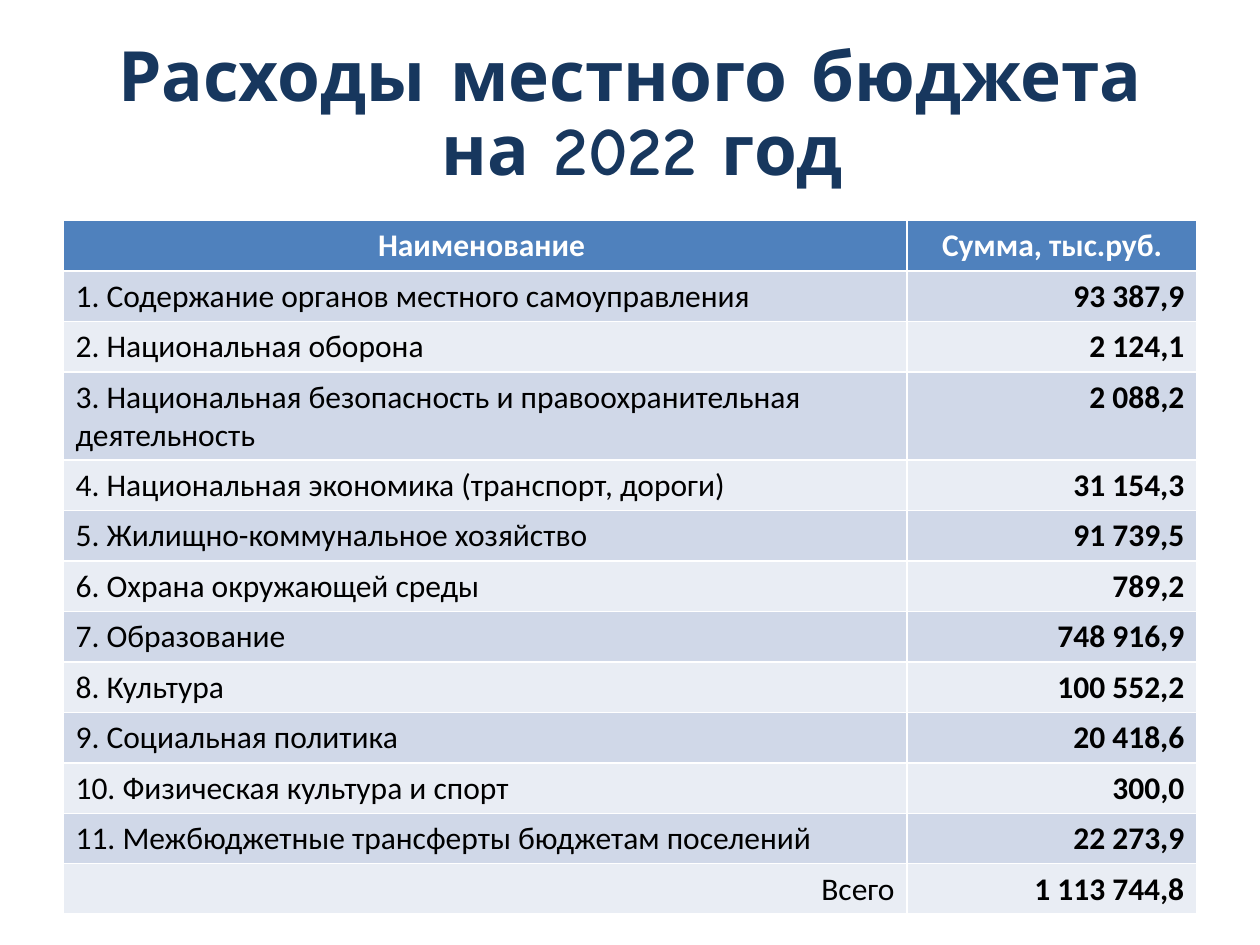
import pptx
import pptx.util
import pptx.dml.color
import pptx.enum.text
from dataclasses import dataclass

Inches = pptx.util.Inches
Align = pptx.enum.text.PP_ALIGN


@dataclass(frozen=True)
class Theme:
    """Colours, fonts and type sizes of the slide."""
    navy: str = "17375E"
    blue: str = "4F81BD"
    white: str = "FFFFFF"
    black: str = "000000"
    bands: tuple = ("D0D8E8", "E9EDF4")
    head: str = "Comic Neue"
    body: str = "Calibri"
    big: float = 39.6
    small: float = 18


THEME = Theme()
TITLE = ("Расходы местного бюджета", " на 2022 год")
HEADS = ("Наименование ", "Сумма, тыс.руб.")
COSTS = (
    ("1. Содержание органов местного самоуправления", "93 387,9"),
    ("2. Национальная оборона", "2 124,1"),
    ("3. Национальная безопасность и правоохранительная деятельность", "2 088,2"),
    ("4. Национальная экономика (транспорт, дороги)", "31 154,3"),
    ("5. Жилищно-коммунальное хозяйство", "91 739,5"),
    ("6. Охрана окружающей среды", "789,2"),
    ("7. Образование", "748 916,9"),
    ("8. Культура", "100 552,2"),
    ("9. Социальная политика", "20 418,6"),
    ("10. Физическая культура и спорт", "300,0"),
    ("11. Межбюджетные трансферты бюджетам поселений", "22 273,9"),
)
TOTAL = ("Всего", "1 113 744,8")


def style(item, **values):
    """Set each format value on the item."""
    for name, value in values.items():
        setattr(item, name, value)


def tint(hue):
    """Turn a hex string into a colour."""
    return pptx.dml.color.RGBColor.from_string(hue)


def write(para, lines, face, size, hue, bold, align):
    """Fill a paragraph with lines of one look."""
    for spot, line in enumerate(lines):
        if spot:
            para.add_line_break()
        run = para.add_run()
        run.text = line
        style(run.font, name=face, size=pptx.util.Pt(size), bold=bold)
        run.font.color.rgb = tint(hue)
    para.alignment = align


def add_title(slide):
    """Add the two-line heading."""
    box = slide.shapes.add_textbox(Inches(0.5), Inches(0.3), Inches(9), Inches(1.25))
    frame = box.text_frame
    style(frame, word_wrap=True, vertical_anchor=pptx.enum.text.MSO_ANCHOR.MIDDLE)
    para = frame.paragraphs[0]
    write(para, TITLE, THEME.head, THEME.big, THEME.navy, True, Align.CENTER)
    para.line_spacing = 0.88


def fill_row(row, texts, back, hue, bolds, aligns):
    """Write and colour the cells of one row."""
    for cell, text, bold, align in zip(row.cells, texts, bolds, aligns):
        cell.fill.solid()
        cell.fill.fore_color.rgb = tint(back)
        para = cell.text_frame.paragraphs[0]
        write(para, [text], THEME.body, THEME.small, hue, bold, align)


def add_costs(slide):
    """Add the budget table with its header and total."""
    rows = (*COSTS, TOTAL)
    frame = slide.shapes.add_table(len(rows) + 1, 2, Inches(0.5), Inches(1.75),
                                   Inches(9), Inches(5.57))
    table = frame.table
    for col, width in zip(table.columns, (6.7, 2.3)):
        col.width = Inches(width)
    for row in table.rows:
        row.height = Inches(0.4)
    frame.height = Inches(5.57)
    fill_row(table.rows[0], HEADS, THEME.blue, THEME.white,
             (True, True), (Align.CENTER, Align.CENTER))
    for spot, texts in enumerate(rows):
        side = Align.RIGHT if texts is TOTAL else Align.LEFT
        fill_row(table.rows[spot + 1], texts, THEME.bands[spot % 2], THEME.black,
                 (False, True), (side, Align.RIGHT))


def main():
    """Build and save the slide."""
    deck = pptx.Presentation()
    style(deck, slide_width=Inches(10), slide_height=Inches(7.5))
    slide = deck.slides.add_slide(deck.slide_layouts[6])
    add_title(slide)
    add_costs(slide)
    deck.save("out.pptx")


if __name__ == "__main__":
    main()
